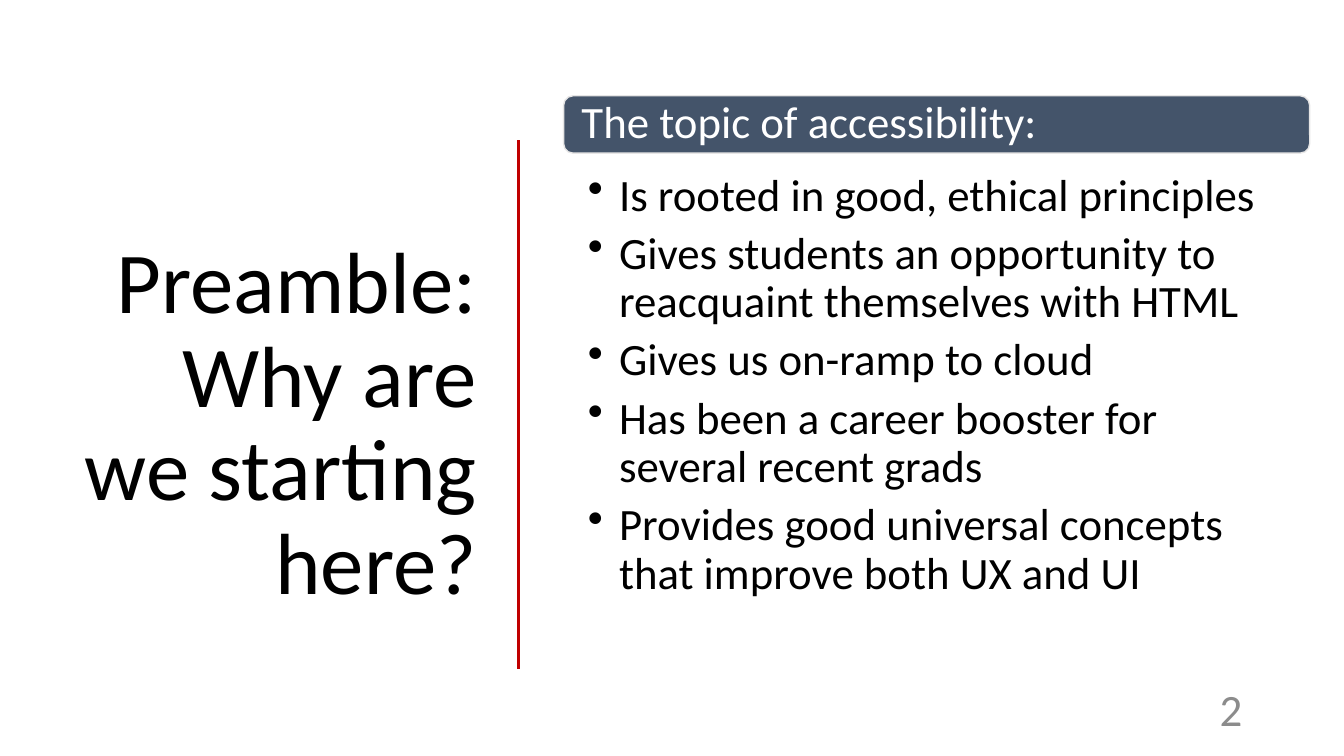
from dataclasses import dataclass

from lxml import etree
from pptx import Presentation
from pptx.dml.color import RGBColor
from pptx.enum.shapes import MSO_CONNECTOR, MSO_SHAPE
from pptx.enum.text import MSO_ANCHOR, MSO_AUTO_SIZE, PP_ALIGN
from pptx.oxml.ns import qn
from pptx.util import Inches, Pt

LEFT, RIGHT = PP_ALIGN.LEFT, PP_ALIGN.RIGHT
TOP, MIDDLE = MSO_ANCHOR.TOP, MSO_ANCHOR.MIDDLE
NO_AUTOFIT = MSO_AUTO_SIZE.NONE
ROUNDED_RECTANGLE = MSO_SHAPE.ROUNDED_RECTANGLE
STRAIGHT = MSO_CONNECTOR.STRAIGHT

TOPIC_POINTS = [
    "Is rooted in good, ethical principles",
    "Gives students an opportunity to reacquaint themselves with HTML",
    "Gives us on-ramp to cloud",
    "Has been a career booster for several recent grads",
    "Provides good universal concepts that improve both UX and UI",
]


@dataclass(frozen=True)
class Theme:
    """Colours, font and type sizes of the slide."""

    font: str = "Calibri"
    title_size: int = 62
    body_size: int = 32
    text: str = "000000"
    inverse: str = "FFFFFF"
    muted: str = "8C8C8C"
    banner: str = "44546A"
    banner_line: str = "E7E6E6"
    accent: str = "C00000"


class SlideBuilder:
    """Adds themed elements to one slide."""

    def __init__(self, slide, theme):
        self.slide = slide
        self.theme = theme

    def fill_text(self, shape, lines, size, color, align=LEFT, anchor=MIDDLE,
                  insets=(0.1, 0.05, 0.1, 0.05), spacing=0.9, after=0,
                  bullet_indent=0):
        """Fill a shape with styled paragraphs."""
        frame = shape.text_frame
        frame.word_wrap = True
        frame.auto_size = NO_AUTOFIT
        frame.vertical_anchor = anchor
        (frame.margin_left, frame.margin_top,
         frame.margin_right, frame.margin_bottom) = map(Inches, insets)
        frame.text = "\n".join(lines)
        for paragraph in frame.paragraphs:
            paragraph.alignment = align
            paragraph.line_spacing = spacing
            paragraph.space_before = Pt(0)
            paragraph.space_after = Pt(after)
            paragraph.font.name = self.theme.font
            paragraph.font.size = Pt(size)
            paragraph.font.color.rgb = RGBColor.from_string(color)
            if bullet_indent:
                self.add_bullet(paragraph, bullet_indent)

    def add_bullet(self, paragraph, indent):
        """Give a paragraph a hanging bullet."""
        properties = paragraph._p.get_or_add_pPr()
        properties.set("marL", str(Inches(indent)))
        properties.set("indent", str(Inches(-indent)))
        bullet = etree.Element(qn("a:buChar"), char="•")
        properties.find(qn("a:defRPr")).addprevious(bullet)

    def title(self, text, left, top, width, height):
        """Place and format the title placeholder."""
        shape = self.slide.shapes.title
        shape.left, shape.top, shape.width, shape.height = map(
            Inches, (left, top, width, height))
        self.fill_text(shape, [text], self.theme.title_size, self.theme.text,
                       align=RIGHT, after=6)

    def banner(self, text, left, top, width, height):
        """Add a rounded heading bar."""
        shape = self.slide.shapes.add_shape(
            ROUNDED_RECTANGLE, *map(Inches, (left, top, width, height)))
        shape.shadow.inherit = False
        shape.fill.solid()
        shape.fill.fore_color.rgb = RGBColor.from_string(self.theme.banner)
        shape.line.color.rgb = RGBColor.from_string(self.theme.banner_line)
        shape.line.width = Pt(1)
        self.fill_text(shape, [text], self.theme.body_size, self.theme.inverse,
                       insets=(0.15, 0, 0.15, 0))

    def text(self, lines, left, top, width, height, color, **style):
        """Add a text box in the body size."""
        shape = self.slide.shapes.add_textbox(
            *map(Inches, (left, top, width, height)))
        self.fill_text(shape, lines, self.theme.body_size, color, **style)

    def divider(self, left, top, bottom):
        """Add a vertical accent line."""
        line = self.slide.shapes.add_connector(
            STRAIGHT, *map(Inches, (left, top, left, bottom)))
        line.line.color.rgb = RGBColor.from_string(self.theme.accent)
        line.line.width = Pt(2)
        etree.SubElement(line._element.spPr, qn("a:effectLst"))


def main():
    """Build and save the presentation."""
    presentation = Presentation()
    presentation.slide_width = Inches(13.33)
    presentation.slide_height = Inches(7.5)
    slide = presentation.slides.add_slide(
        presentation.slide_layouts.get_by_name("Title Only"))
    theme = Theme()
    builder = SlideBuilder(slide, theme)

    builder.title("Preamble: Why are we starting here?", 0.52, 1.17, 4.31, 6.11)
    builder.banner("The topic of accessibility:", 5.59, 0.95, 7.4, 0.57)
    builder.text(TOPIC_POINTS, 5.59, 1.67, 7.4, 4.49, theme.text, anchor=TOP,
                 insets=(0.24, 0.04, 0.25, 0.04), after=7, bullet_indent=0.31)
    builder.divider(5.14, 1.39, 6.64)
    builder.text(["2"], 9.42, 6.71, 3, 0.64, theme.muted, align=RIGHT, spacing=1.0)

    presentation.save("out.pptx")


if __name__ == "__main__":
    main()
